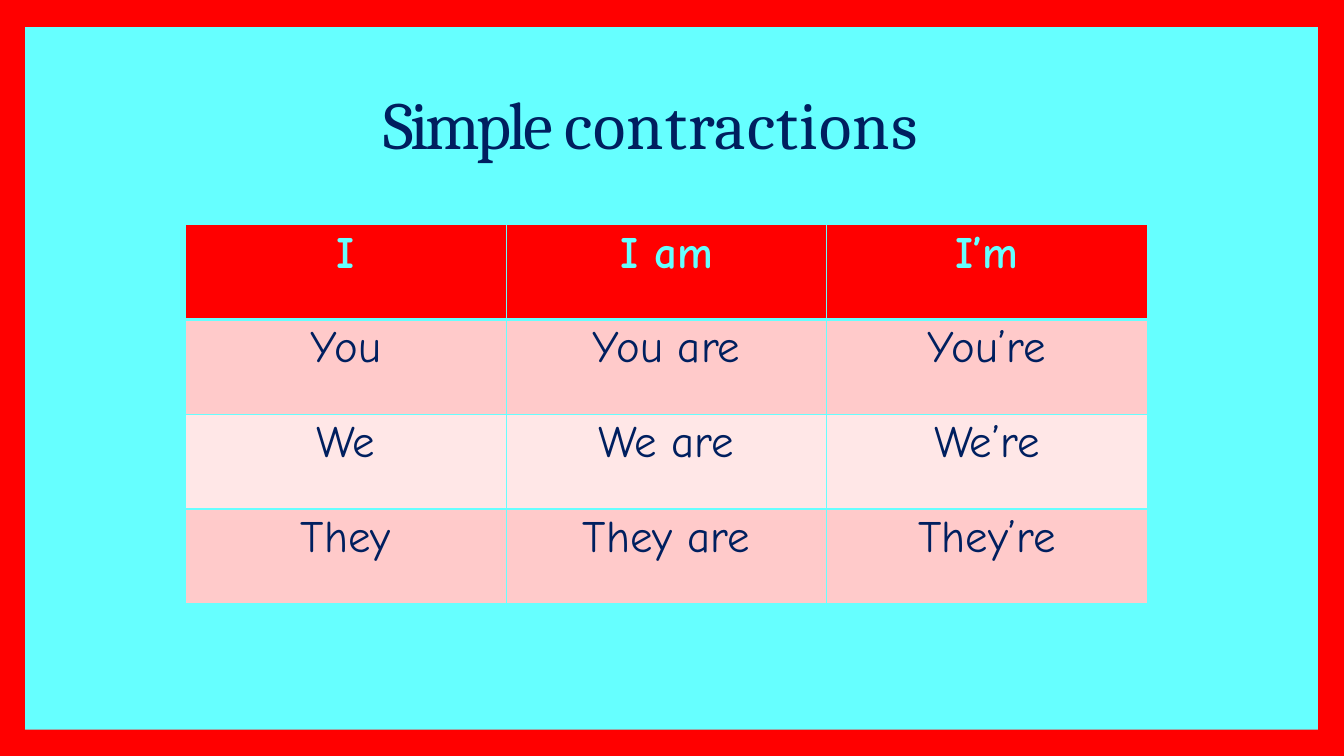
"""Build the slide on simple contractions."""
from lxml import etree
from pptx import Presentation
from pptx import util as u
from pptx.dml.color import RGBColor
from pptx.enum import shapes, text
from pptx.oxml.ns import qn

TITLE = [("Simple ", -240), ("contractions", 80)]
ROWS = [
    ("I", "I am", "I’m"),
    ("You", "You are", "You’re"),
    ("We", "We are", "We’re"),
    ("They", "They are", "They’re"),
]
HEX = {"red": "FF0000", "cyan": "66FFFF", "navy": "001F5F",
       "pink": "FFCACA", "pale": "FFE7E7"}
FILLS = ["red", "pink", "pale", "pink"]
PANELS = [("red", 0, 0, 13.33, 7.5), ("cyan", 0.25, 0.27, 12.82, 6.97)]
COL, ROW = 3.18, 0.94


def rgb(name):
    return RGBColor.from_string(HEX[name])


def box(*lens):
    return [u.Inches(n) for n in lens]


def style(par, face, size, color, bold=False):
    font = par.font
    font.name, font.size, font.bold = face, u.Pt(size), bold
    font.color.rgb = rgb(color)


def edge(cell, side, width):
    line = etree.SubElement(cell._tc.get_or_add_tcPr(), qn("a:ln" + side),
                            w=str(u.Pt(width)))
    fill = etree.SubElement(line, qn("a:solidFill"))
    etree.SubElement(fill, qn("a:srgbClr"), val=HEX["cyan"])


def panels(slide):
    for color, *place in PANELS:
        rect = slide.shapes.add_shape(shapes.MSO_SHAPE.RECTANGLE, *box(*place))
        rect.shadow.inherit = False
        rect.fill.solid()
        rect.fill.fore_color.rgb = rgb(color)
        rect.line.fill.background()


def title(slide):
    frame = slide.shapes.add_textbox(*box(3.8, 0.81, 5.63, 0.83)).text_frame
    frame.word_wrap = True
    frame.margin_left = frame.margin_right = frame.margin_bottom = 0
    frame.margin_top = u.Inches(0.01)
    par = frame.paragraphs[0]
    par.space_before = u.Pt(1)
    style(par, "Cambria", 48, "navy")
    for words, gap in TITLE:
        run = par.add_run()
        run.text = words
        run._r.get_or_add_rPr().set("spc", str(gap))


def table(slide):
    size = len(ROWS), len(ROWS[0])
    place = box(1.84, 2.23, COL * size[1], ROW * size[0])
    grid = slide.shapes.add_table(*size, *place).table
    grid.horz_banding = False
    for r, (words, color) in enumerate(zip(ROWS, FILLS)):
        head = r == 0
        for c, word in enumerate(words):
            cell = grid.cell(r, c)
            cell.margin_left = cell.margin_right = cell.margin_bottom = 0
            cell.margin_top = u.Inches(0.03)
            for side in "LRTB":
                thick = (r, side) in ((0, "B"), (1, "T"))
                edge(cell, side, 3 if thick else 1)
            cell.fill.solid()
            cell.fill.fore_color.rgb = rgb(color)
            cell.text = word
            par = cell.text_frame.paragraphs[0]
            par.alignment = text.PP_ALIGN.CENTER
            par.space_before = u.Pt(2)
            style(par, "Comic Neue", 32, "cyan" if head else "navy", head)


def main():
    prs = Presentation()
    prs.slide_width, prs.slide_height = box(13.33, 7.5)
    slide = prs.slides.add_slide(prs.slide_layouts[6])
    panels(slide)
    title(slide)
    table(slide)
    prs.save("out.pptx")


if __name__ == "__main__":
    main()
